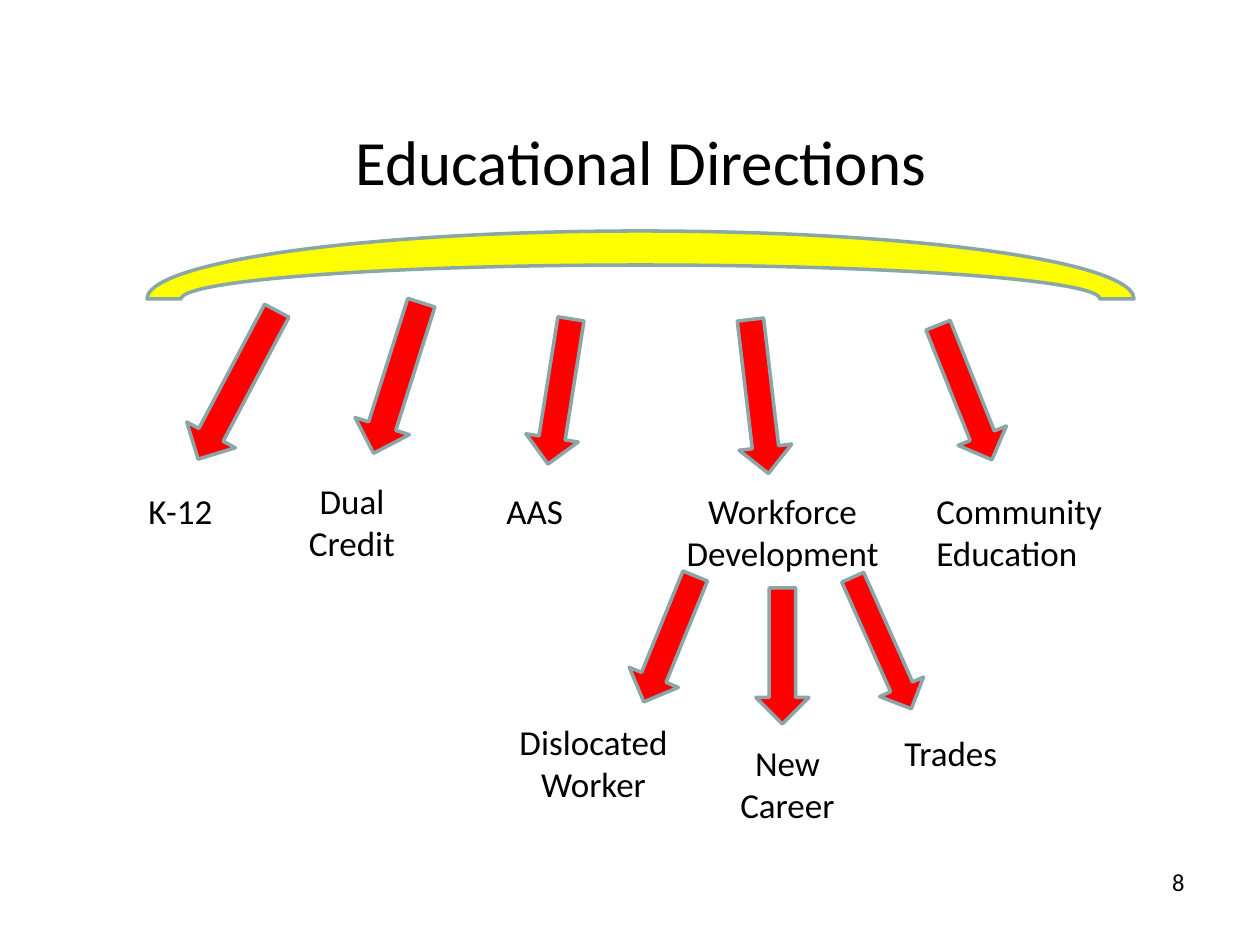
from pptx import Presentation
from pptx.dml.color import RGBColor
from pptx.enum.shapes import MSO_SHAPE
from pptx.enum.text import MSO_AUTO_SIZE, PP_ALIGN
from pptx.util import Emu, Pt

PX_PER_INCH = 126
BLACK = RGBColor(0x00, 0x00, 0x00)
RED = RGBColor(0xFF, 0x00, 0x00)
YELLOW = RGBColor(0xFF, 0xFF, 0x00)
OUTLINE = RGBColor(0x8A, 0xA6, 0xA8)
FONT = "Calibri"

ARC, DOWN_ARROW = MSO_SHAPE.BLOCK_ARC, MSO_SHAPE.DOWN_ARROW
LEFT, CENTER, RIGHT = PP_ALIGN.LEFT, PP_ALIGN.CENTER, PP_ALIGN.RIGHT
GROW, FIXED = MSO_AUTO_SIZE.SHAPE_TO_FIT_TEXT, MSO_AUTO_SIZE.NONE

ONE_LINE, TWO_LINES = 55, 97  # label heights

# left, top, width, height, rotation
DIRECTION_ARROWS = [
    (210, 301, 55, 168, 27.9),
    (369, 299, 57, 158, 17.6),
    (533, 318, 53, 147, 9),
    (733, 319, 53, 155, -6.7),
    (939, 320, 52, 145, -21.8),
]
WORKFORCE_ARROWS = [
    (643, 571, 53, 136, 22.2),
    (756, 588, 53, 136, 0),
    (858, 571, 48, 144, -24),
]

# text, left, top, width, height, alignment
DIRECTION_LABELS = [
    ("K-12", 136, 483, 105, ONE_LINE, LEFT),
    ("Dual Credit", 284, 473, 136, TWO_LINES, CENTER),
    ("AAS", 494, 483, 105, ONE_LINE, LEFT),
    ("Workforce Development", 672, 483, 221, TWO_LINES, CENTER),
    ("Community Education", 924, 483, 252, TWO_LINES, LEFT),
]
WORKFORCE_LABELS = [
    ("Dislocated Worker", 483, 714, 221, TWO_LINES, CENTER),
    ("New Career", 714, 735, 147, TWO_LINES, CENTER),
    ("Trades", 892, 725, 199, ONE_LINE, LEFT),
]


def px(n):
    return Emu(round(n * 914400 / PX_PER_INCH))


def add_block(s, kind, left, top, width, height, color, rotation=0):
    """Add a filled preset shape with the common outline."""
    sp = s.shapes.add_shape(kind, px(left), px(top), px(width), px(height))
    sp.rotation = rotation
    sp.shadow.inherit = False
    sp.fill.solid()
    sp.fill.fore_color.rgb = color
    sp.line.color.rgb = OUTLINE
    sp.line.width = Pt(2)


def add_text(s, text, left, top, width, height, align, size=20, fit=GROW):
    sp = s.shapes.add_textbox(px(left), px(top), px(width), px(height))
    tf = sp.text_frame
    tf.word_wrap = True
    tf.auto_size = fit
    p = tf.paragraphs[0]
    p.alignment = align
    r = p.add_run()
    r.text = text
    r.font.name = FONT
    r.font.size = Pt(size)
    r.font.color.rgb = BLACK


def main():
    prs = Presentation()
    prs.slide_width, prs.slide_height = px(1260), px(945)
    s = prs.slides.add_slide(prs.slide_layouts[6])

    add_block(s, ARC, 147, 231, 987, 136, YELLOW)
    for left, top, width, height, rotation in DIRECTION_ARROWS + WORKFORCE_ARROWS:
        add_block(s, DOWN_ARROW, left, top, width, height, RED, rotation)

    add_text(s, "Educational Directions", 242, 116, 798, 89, CENTER, size=36)
    for label in DIRECTION_LABELS + WORKFORCE_LABELS:
        add_text(s, *label)
    add_text(s, "8", 903, 861, 294, 66, RIGHT, size=14, fit=FIXED)

    prs.save("out.pptx")


if __name__ == "__main__":
    main()
